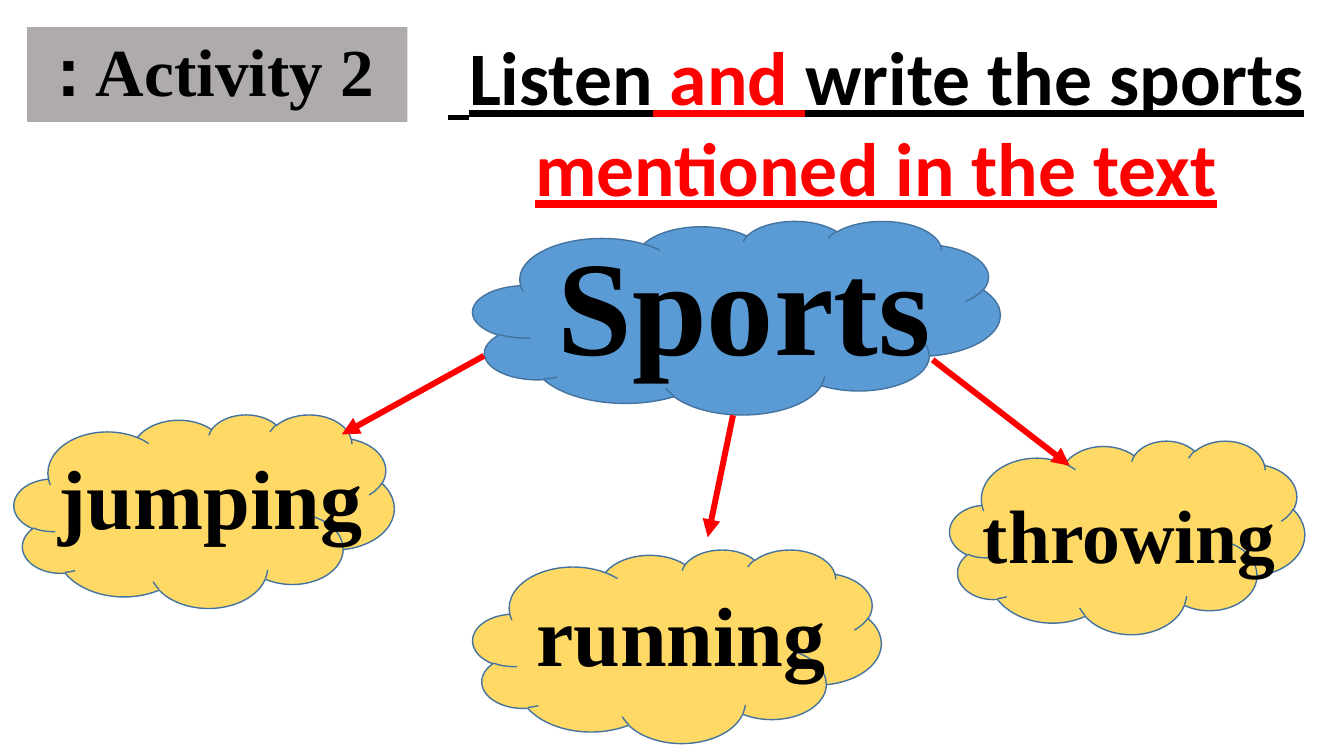
import pptx
import pptx.util
import pptx.dml.color
import pptx.enum.dml
import pptx.enum.shapes
import pptx.enum.text
import pptx.oxml.ns
import lxml.etree

Inches = pptx.util.Inches
RGBColor = pptx.dml.color.RGBColor
PP_ALIGN = pptx.enum.text.PP_ALIGN
AUTO_SIZE = pptx.enum.text.MSO_AUTO_SIZE
ANCHOR = pptx.enum.text.MSO_ANCHOR

BLACK = RGBColor(0x00, 0x00, 0x00)
RED = RGBColor(0xFF, 0x00, 0x00)
GRAY = RGBColor(0xAF, 0xAB, 0xAB)
BLUE = RGBColor(0x5B, 0x9B, 0xD5)
YELLOW = RGBColor(0xFF, 0xD9, 0x66)
OUTLINE = RGBColor(0x43, 0x73, 0x9E)


def write_text(tf, paragraphs, size, font="Times New Roman",
               align=PP_ALIGN.RIGHT, underline=None):
    """Fill tf with right-to-left bold paragraphs, each a list of (text, colour)."""
    for i, runs in enumerate(paragraphs):
        p = tf.paragraphs[0] if i == 0 else tf.add_paragraph()
        p.alignment = align
        p._p.get_or_add_pPr().set("rtl", "1")
        for text, color in runs:
            r = p.add_run()
            r.text = text
            r.font.name = font
            r.font.size = pptx.util.Pt(size)
            r.font.bold = True
            r.font.underline = underline
            r.font.color.rgb = color


def add_label(slide, box, paragraphs, size, **fmt):
    sp = slide.shapes.add_textbox(*map(Inches, box))
    tf = sp.text_frame
    tf.word_wrap = False
    tf.auto_size = AUTO_SIZE.SHAPE_TO_FIT_TEXT
    write_text(tf, paragraphs, size, **fmt)


prs = pptx.Presentation()
prs.slide_width = Inches(13.33)
prs.slide_height = Inches(7.5)
s = prs.slides.add_slide(prs.slide_layouts[5])

# Activity title
title = s.shapes.title
title.left, title.top, title.width, title.height = map(Inches, (0.27, 0.27, 3.77, 0.94))
title.fill.solid()
title.fill.fore_color.rgb = GRAY
tf = title.text_frame
tf.auto_size = AUTO_SIZE.NONE
tf.word_wrap = True
tf.vertical_anchor = ANCHOR.MIDDLE
write_text(tf, [[("Activity 2 :", BLACK)]], 48, align=PP_ALIGN.CENTER)
tf.paragraphs[0].line_spacing = 0.9

# Clouds
clouds = [
    ((4.69, 2.19, 5.23, 1.92), BLUE),
    ((9.42, 4.37, 3.52, 1.92), YELLOW),
    ((4.69, 5.45, 4.05, 1.92), YELLOW),
    ((0.14, 4.11, 3.77, 1.92), YELLOW),
]
for box, color in clouds:
    sp = s.shapes.add_shape(pptx.enum.shapes.MSO_SHAPE.CLOUD, *map(Inches, box))
    sp.shadow.inherit = False
    sp.fill.solid()
    sp.fill.fore_color.rgb = color
    sp.line.color.rgb = OUTLINE
    sp.line.width = pptx.util.Pt(1)

# Arrows from the central cloud to each sport
arrows = [
    (4.8, 3.53, 3.39, 4.31),
    (7.27, 4.12, 7.02, 5.33),
    (9.25, 3.57, 10.61, 4.62),
]
for ends in arrows:
    arrow = s.shapes.add_connector(pptx.enum.shapes.MSO_CONNECTOR.STRAIGHT,
                                   *map(Inches, ends))
    arrow.line.color.rgb = RED
    arrow.line.width = pptx.util.Pt(4.25)
    ln = arrow.line._get_or_add_ln()
    lxml.etree.SubElement(ln, pptx.oxml.ns.qn("a:tailEnd"), type="triangle")
    lxml.etree.SubElement(arrow._element.spPr, pptx.oxml.ns.qn("a:effectLst"))

# Instruction and cloud labels
instruction = [
    [("Listen", BLACK), (" and ", RED), ("write the sports ", BLACK)],
    [("mentioned in the text", RED)],
]
add_label(s, (4.32, 0.25, 8.74, 1.92), instruction, 54, font="Calibri",
          align=PP_ALIGN.CENTER, underline=True)

labels = [
    ("Sports", (5.39, 2.14, 3.94, 1.72), 96),
    ("jumping", (0.45, 4.37, 3.24, 1.11), 60),
    ("throwing", (9.62, 4.79, 3.13, 1.01), 54),
    ("running", (5.19, 5.73, 3.1, 1.11), 60),
]
for text, box, size in labels:
    add_label(s, box, [[(text, BLACK)]], size)

prs.save("out.pptx")
